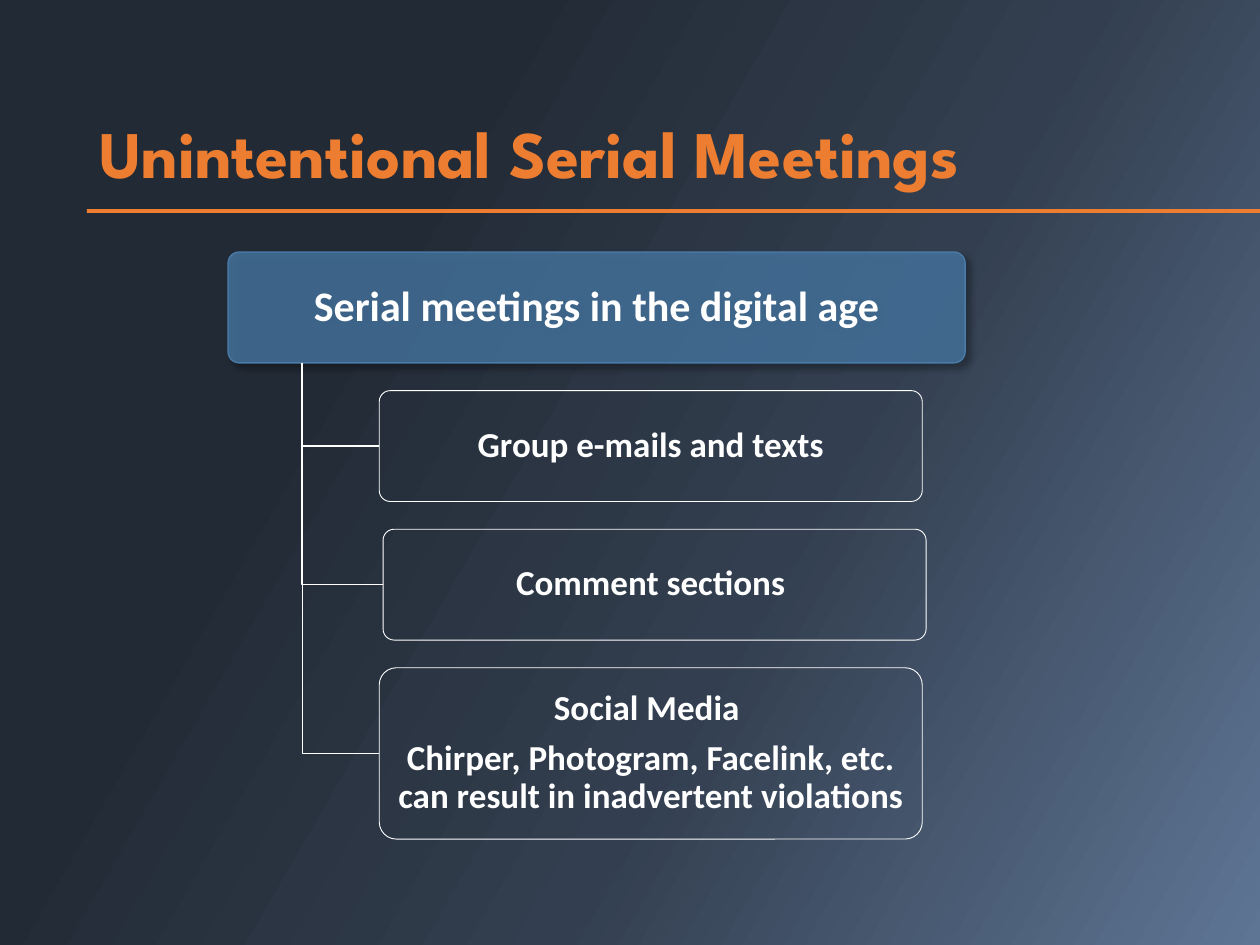
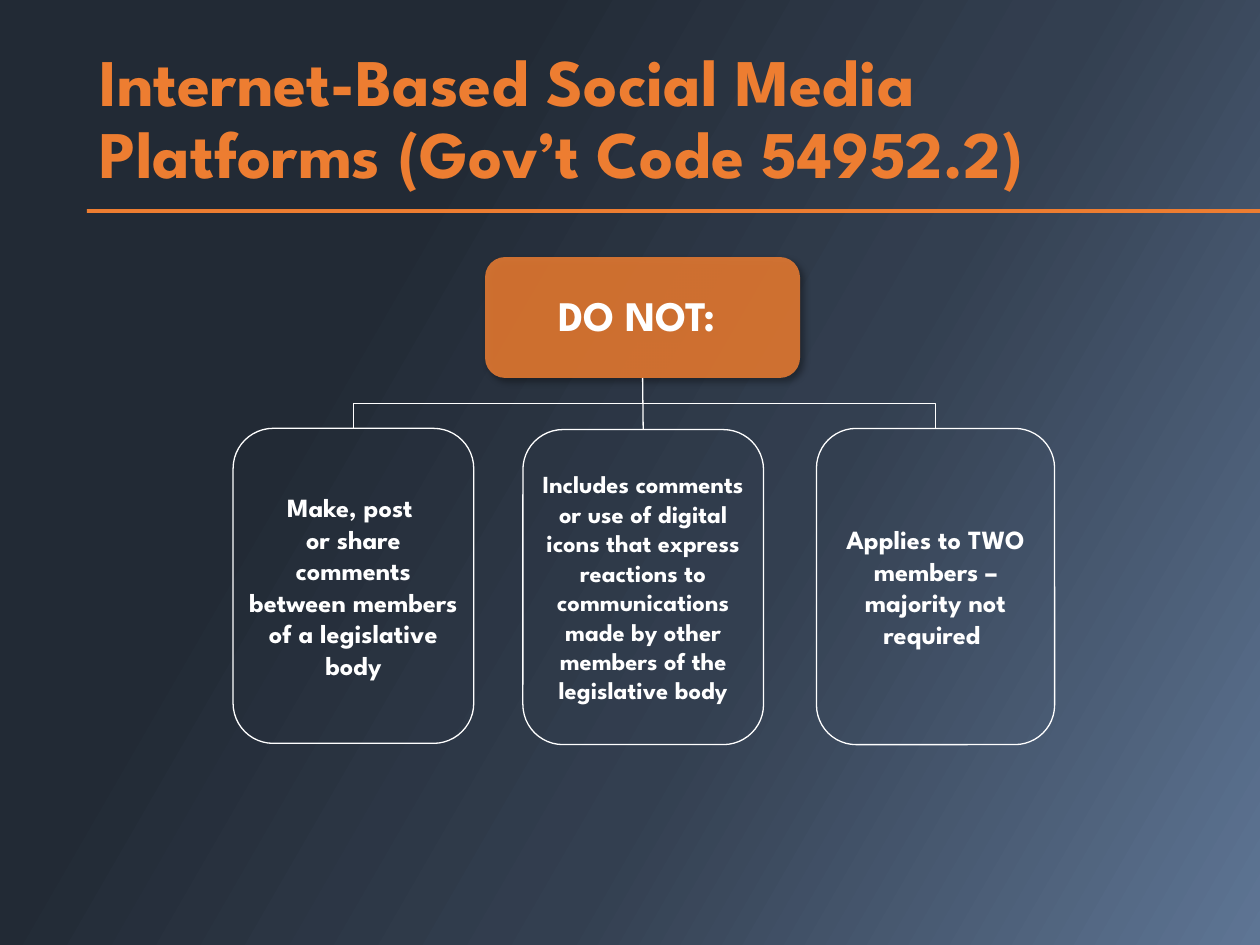
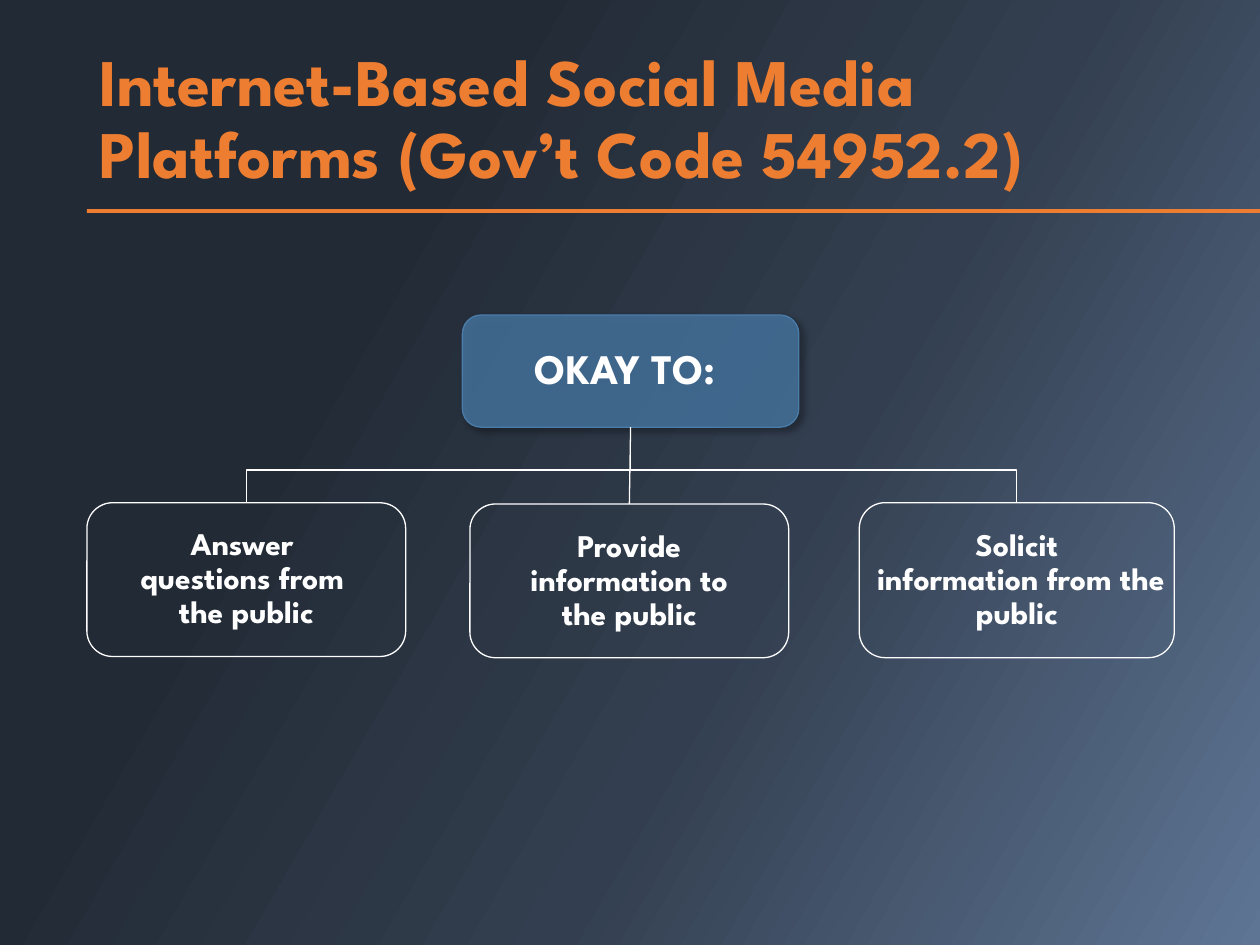
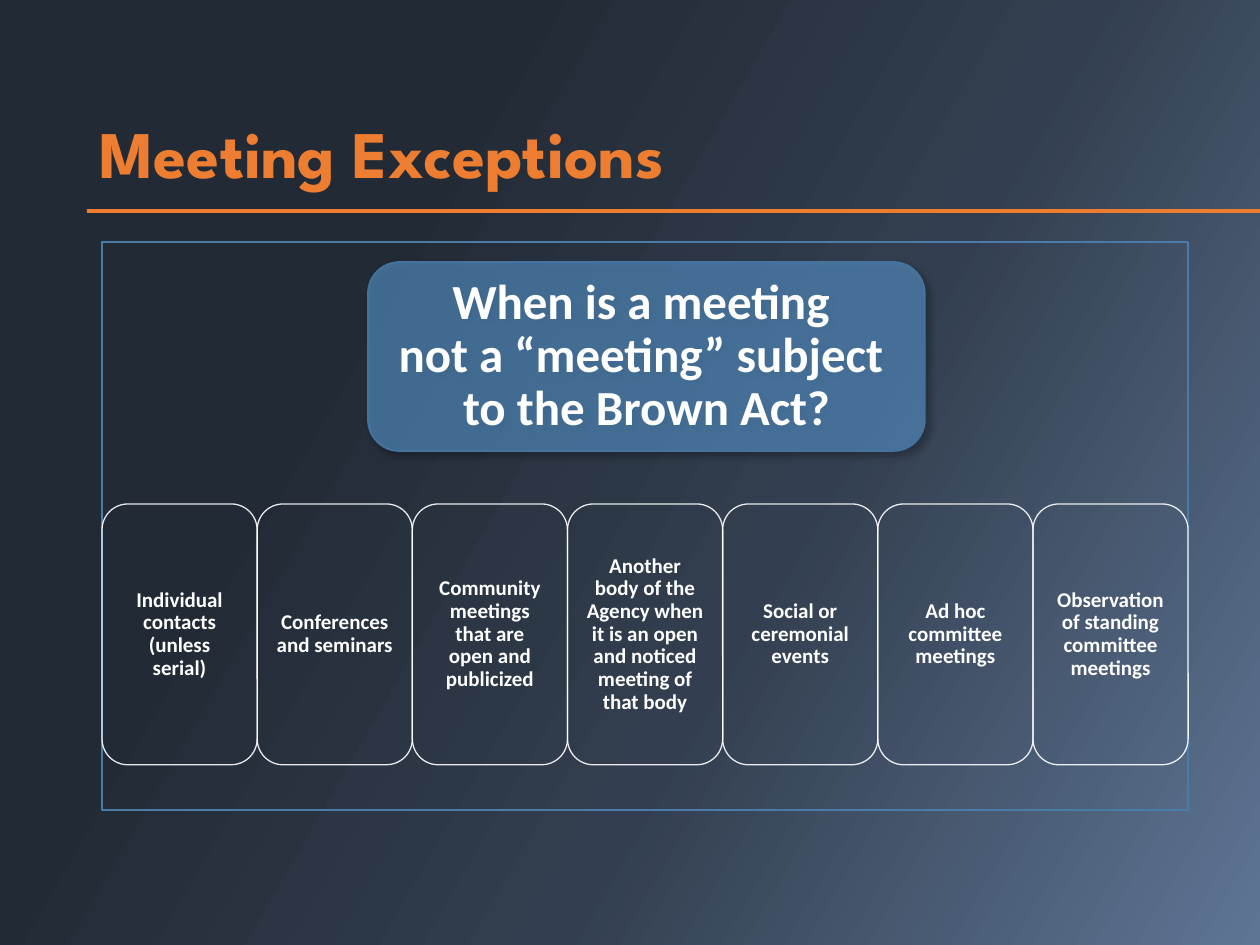
import copy

from lxml import etree
from pptx import Presentation
from pptx.dml.color import RGBColor
from pptx.enum import shapes, text
from pptx.oxml.ns import qn
from pptx.util import Inches, Pt

# Colours and fonts
ORANGE = RGBColor(0xED, 0x7D, 0x31)
BLUE = RGBColor(0x4A, 0x7C, 0xAA)
SKY = RGBColor(0x5B, 0x9B, 0xD5)
SKY_EDGE = RGBColor(0x43, 0x73, 0x9E)
WHITE = RGBColor(0xFF, 0xFF, 0xFF)
BACKDROP = [(0, "222A35"), (29, "222A35"), (61, "333F50"), (100, "5E7594")]
HEAD_FONT, BODY_FONT = "League Spartan", "Calibri"

# Content: boxes are (left, top, width, height) in inches
SERIAL = {
    "title": "Unintentional Serial Meetings",
    "root": ("Serial meetings in the digital age", (1.81, 2, 5.85, 0.88)),
    "items": [  # left, height, paragraphs
        (3.01, 0.88, ["Group e-mails and texts"]),
        (3.04, 0.88, ["Comment sections "]),
        (3.01, 1.36, ["Social Media ",
                      "Chirper, Photogram, Facelink, etc. can result in "
                      "inadvertent violations"]),
    ],
    "trunk": 2.4, "gap": 0.22, "width": 4.31,
}
PLATFORMS = "Internet-Based Social Media Platforms (Gov’t Code 54952.2)"
CHARTS = [
    {
        "title": PLATFORMS,
        "root": ("DO NOT: ", (3.85, 2.04, 2.5, 0.96)),
        "root_look": {"fill": ORANGE, "alpha": 85},
        "bus": 3.2, "spacing": 1,
        "cards": [
            ("Make, post \vor share comments between members of a "
             "legislative body", 15, (1.85, 3.4, 1.91, 2.5)),
            ("Includes comments or use of digital icons that express "
             "reactions to communications made by other members of the "
             "legislative body", 14, (4.15, 3.41, 1.91, 2.5)),
            ("Applies to TWO members – majority not required ", 15,
             (6.48, 3.4, 1.89, 2.51)),
        ],
    },
    {
        "title": PLATFORMS,
        "root": ("OKAY TO: ", (3.67, 2.5, 2.67, 0.89)),
        "root_look": {"fill": BLUE, "alpha": 75, "line": BLUE},
        "bus": 3.73, "spacing": 0.9,
        "cards": [
            ("Answer \vquestions from \vthe public", 18,
             (0.69, 3.99, 2.53, 1.22)),
            ("Provide\v information to \vthe public", 18,
             (3.73, 4, 2.53, 1.22)),
            ("Solicit\v information from the public", 18,
             (6.82, 3.99, 2.5, 1.23)),
        ],
    },
]
EXCEPTIONS = {
    "title": "Meeting Exceptions",
    "question": ("When is a meeting \vnot a “meeting” subject \v"
                 "to the Brown Act?", (2.92, 2.08, 4.42, 1.5)),
    "frame": (0.81, 1.92, 8.62, 4.51),
    "cards": [
        "Individual contacts (unless serial)",
        "Conferences and seminars",
        "Community meetings that are open and publicized",
        "Another body of the Agency when it is an open and noticed meeting "
        "of that body",
        "Social or ceremonial events",
        "Ad hoc committee meetings",
        "Observation of standing committee meetings",
    ],
}


# Shared helpers
def inches(values):
    return [Inches(v) for v in values]


def sub(parent, tag, **attrs):
    return etree.SubElement(parent, qn(tag), attrs)


def set_alpha(sp, where, percent):
    color = sp._element.spPr.find(where + qn("a:solidFill") + "/" + qn("a:srgbClr"))
    sub(color, "a:alpha", val=str(percent * 1000))


def add_shadow(sp):
    effects = sp._element.spPr.find(qn("a:effectLst"))
    shadow = sub(effects, "a:outerShdw", blurRad=str(Pt(4)), dist=str(Pt(3)),
                 dir="2700000", algn="tl", rotWithShape="0")
    sub(sub(shadow, "a:srgbClr", val="000000"), "a:alpha", val="40000")


def write(sp, paragraphs, size, font, color=WHITE, spacing=0.9, inset=(0.1, 0.05),
          align=text.PP_ALIGN.CENTER, anchor=text.MSO_ANCHOR.MIDDLE, after=0.35):
    tf = sp.text_frame
    side, edge = inches(inset)
    frame = {"word_wrap": True, "vertical_anchor": anchor,
             "margin_left": side, "margin_right": side,
             "margin_top": edge, "margin_bottom": edge}
    for name, value in frame.items():
        setattr(tf, name, value)
    for i, words in enumerate(paragraphs):
        p = tf.add_paragraph() if i else tf.paragraphs[0]
        p.text = words
        p.alignment, p.line_spacing = align, spacing
        p.space_after = Pt(size * after)
        for r in p.runs:
            for name, value in {"size": Pt(size), "name": font, "bold": True}.items():
                setattr(r.font, name, value)
            r.font.color.rgb = color
        # Line breaks take the height of the text around them
        for br in p._p.findall(qn("a:br")):
            br.append(copy.deepcopy(p.runs[0]._r.rPr))


def add_box(s, box, fill=None, alpha=None, line=None, weight=0.75, line_alpha=None,
            adj=None, shadow=False, kind=shapes.MSO_SHAPE.ROUNDED_RECTANGLE):
    sp = s.shapes.add_shape(kind, *inches(box))
    sp.shadow.inherit = False
    if adj:
        sp.adjustments[0] = adj
    if fill is None:
        sp.fill.background()
    else:
        sp.fill.solid()
        sp.fill.fore_color.rgb = fill
    if alpha:
        set_alpha(sp, "", alpha)
    if line is None:
        sp.line.fill.background()
    else:
        sp.line.color.rgb = line
        sp.line.width = Pt(weight)
    if line_alpha:
        set_alpha(sp, qn("a:ln") + "/", line_alpha)
    if shadow:
        add_shadow(sp)
    return sp


def add_bend(s, points, weight):
    points = [inches(point) for point in points]
    builder = s.shapes.build_freeform(*points[0], scale=1.0)
    builder.add_line_segments(points[1:], close=False)
    sp = builder.convert_to_shape()
    sp.shadow.inherit = False
    sp.fill.background()
    sp.line.color.rgb = WHITE
    sp.line.width = Pt(weight)


def add_link(s, upper, lower, weight):
    link = s.shapes.add_connector(shapes.MSO_CONNECTOR.STRAIGHT, 0, 0, 0, 0)
    link.begin_connect(upper, 2)
    link.end_connect(lower, 0)
    link.line.color.rgb = WHITE
    link.line.width = Pt(weight)
    sub(link._element.spPr, "a:effectLst")


def set_backdrop(master):
    fill = master.background.fill
    fill.gradient()
    grad = master._element.find(".//" + qn("p:bgPr") + "/" + qn("a:gradFill"))
    for child in list(grad):
        grad.remove(child)
    stops = sub(grad, "a:gsLst")
    for place, color in BACKDROP:
        sub(sub(stops, "a:gs", pos=str(place * 1000)), "a:srgbClr", val=color)
    sub(grad, "a:lin", ang=str(30 * 60000), scaled="0")


def add_slide(prs, title):
    s = prs.slides.add_slide(prs.slide_layouts[6])
    add_box(s, (0.69, 1.66, 9.31, 0.03), fill=ORANGE, kind=shapes.MSO_SHAPE.RECTANGLE)
    sp = s.shapes.add_textbox(*inches((0.69, 0.4, 8.62, 1.18)))
    write(sp, [title], 38, HEAD_FONT, ORANGE, align=text.PP_ALIGN.LEFT,
          anchor=text.MSO_ANCHOR.BOTTOM, after=0)
    return s


# Slides
def build_serial(prs, data):
    s = add_slide(prs, data["title"])
    label, box = data["root"]
    root = add_box(s, box, fill=BLUE, alpha=75, line=BLUE, adj=0.1, shadow=True)
    write(root, [label], 24, BODY_FONT, inset=(0.05, 0.03))
    bottom = box[1] + box[3]
    trunk, top = data["trunk"], bottom + data["gap"]
    for left, height, paragraphs in data["items"]:
        middle = top + height / 2
        add_bend(s, [(trunk, bottom), (trunk, middle), (left, middle)], 1)
        item = add_box(s, (left, top, data["width"], height), line=WHITE,
                       weight=0.5, adj=0.1)
        write(item, paragraphs, 20, BODY_FONT, inset=(0.04, 0.03))
        top += height + data["gap"]


def build_chart(prs, data):
    s = add_slide(prs, data["title"])
    label, (left, top, width, height) = data["root"]
    center, bottom, bus = left + width / 2, top + height, data["bus"]
    outer = [data["cards"][0], data["cards"][-1]]
    for _, _, (x, y, w, _) in outer:
        end = x + w / 2
        add_bend(s, [(center, bottom), (center, bus), (end, bus), (end, y)], 0.75)
    root = add_box(s, data["root"][1], shadow=True, **data["root_look"])
    write(root, [label], 24, HEAD_FONT, inset=(0.02, 0.02))
    cards = []
    for words, size, box in data["cards"]:
        card = add_box(s, box, line=WHITE)
        write(card, [words], size, HEAD_FONT, spacing=data["spacing"],
              inset=(0.01, 0.01))
        cards.append(card)
    add_link(s, root, cards[1], 0.75)


def build_exceptions(prs, data):
    s = add_slide(prs, data["title"])
    label, box = data["question"]
    question = add_box(s, box, fill=SKY, alpha=60, line=SKY_EDGE, weight=1, shadow=True)
    write(question, [label], 28, BODY_FONT, inset=(0.02, 0.02), after=0)
    add_box(s, data["frame"], line=BLUE, kind=shapes.MSO_SHAPE.RECTANGLE)
    left, _, width, _ = data["frame"]
    step = width / len(data["cards"])
    for i, words in enumerate(data["cards"]):
        card = add_box(s, (left + i * step, 4, step, 2.07), line=WHITE, line_alpha=90)
        write(card, [words], 12, BODY_FONT, inset=(0.09, 0.02))


def main():
    prs = Presentation()
    prs.slide_width, prs.slide_height = Inches(10), Inches(7.5)
    set_backdrop(prs.slide_master)
    build_serial(prs, SERIAL)
    for data in CHARTS:
        build_chart(prs, data)
    build_exceptions(prs, EXCEPTIONS)
    prs.save("out.pptx")


if __name__ == "__main__":
    main()
